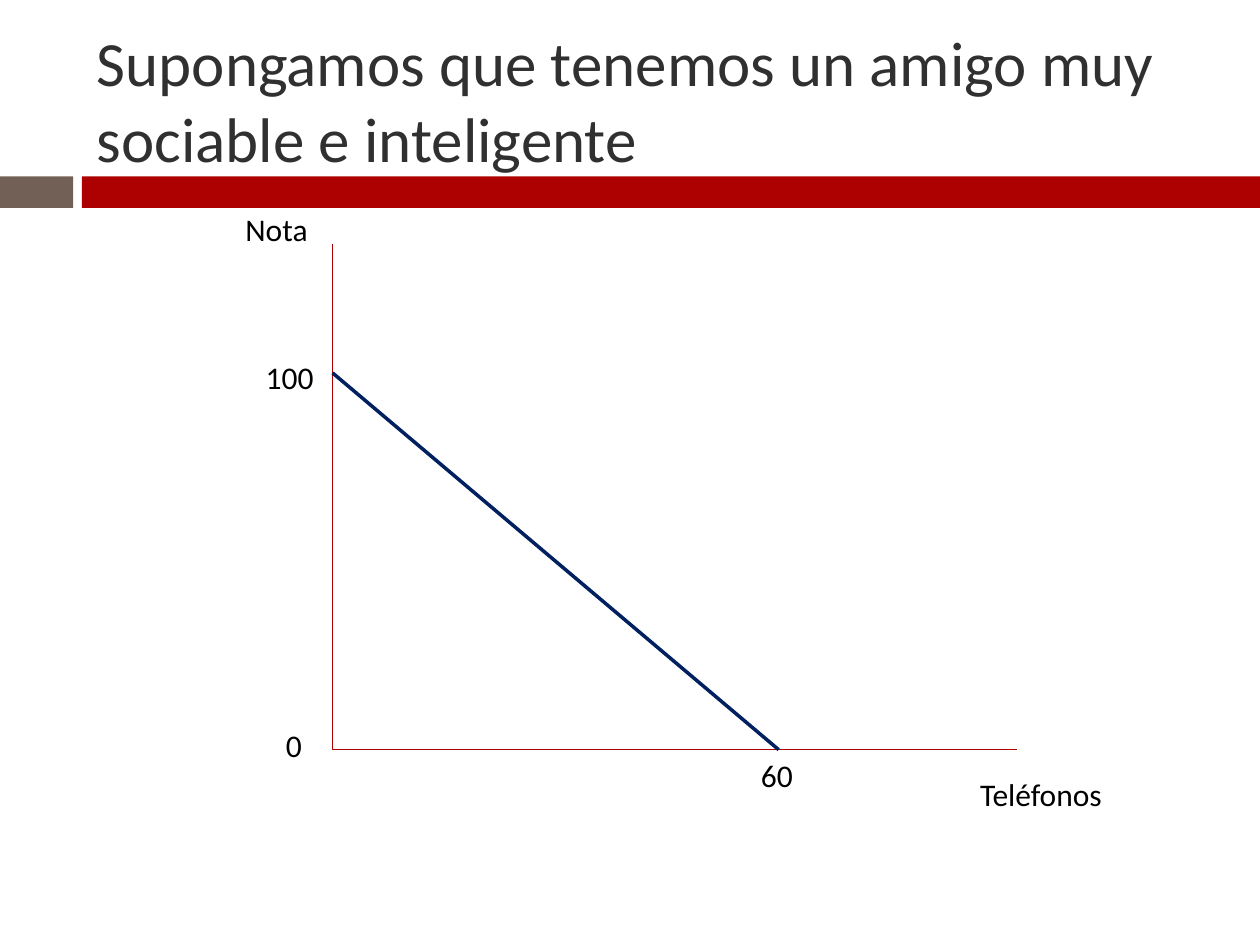
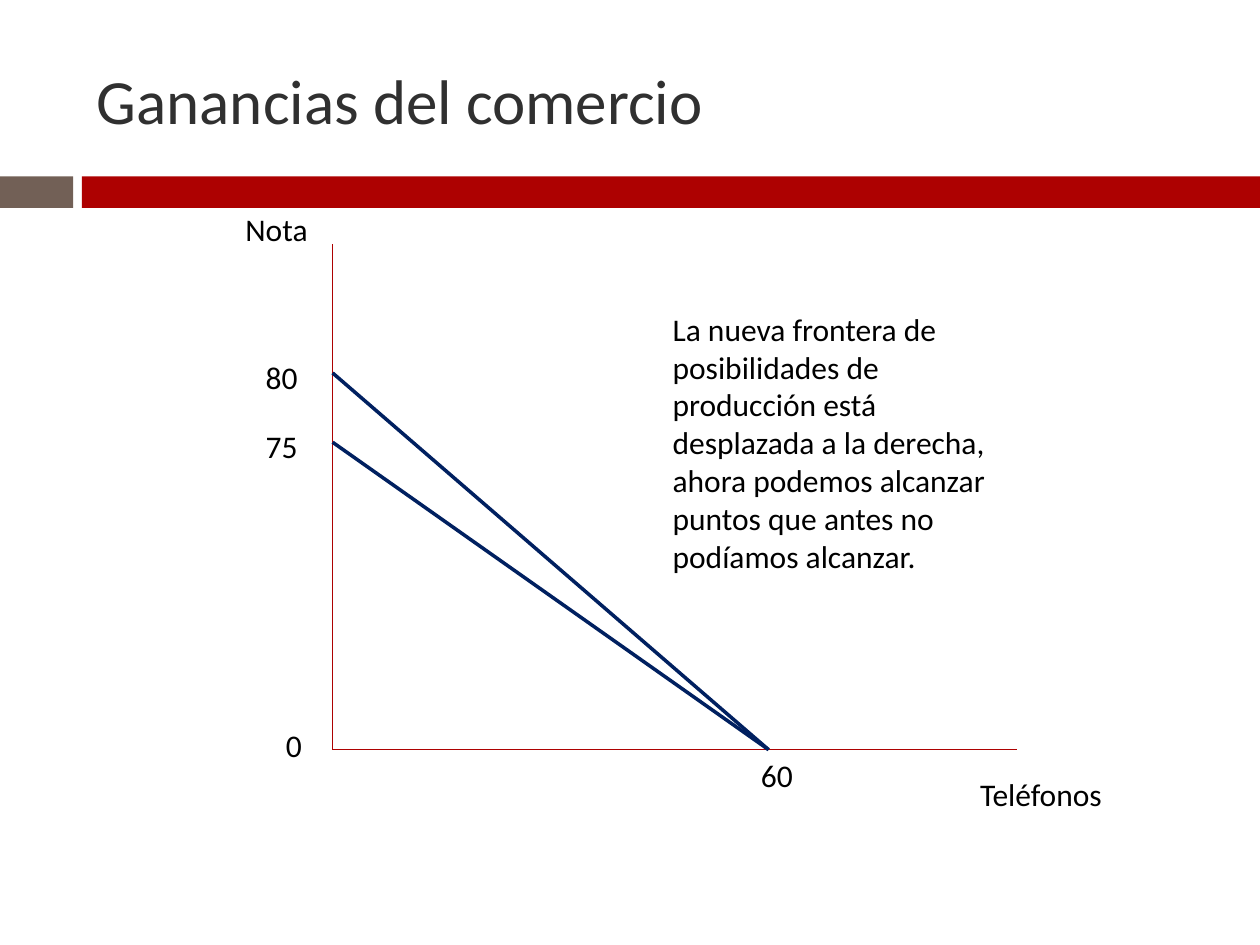
from dataclasses import dataclass

from lxml import etree
from pptx import Presentation
from pptx.dml.color import RGBColor
from pptx.enum.shapes import MSO_CONNECTOR, MSO_SHAPE
from pptx.enum.text import MSO_ANCHOR
from pptx.oxml.ns import qn
from pptx.util import Inches, Pt

RECT = MSO_SHAPE.RECTANGLE
STRAIGHT = MSO_CONNECTOR.STRAIGHT
TOP = MSO_ANCHOR.TOP
MIDDLE = MSO_ANCHOR.MIDDLE

LEFT, BASE = 2.64, 5.95
PEAK, RIGHT = 1.94, 8.07
ROW = 0.4


@dataclass(frozen=True)
class Theme:
    font: str = "Calibri"
    red: str = "AD0101"
    brown: str = "726056"
    navy: str = "002060"
    gray: str = "303030"
    black: str = "000000"
    head: float = 36
    body: float = 18
    thin: float = 0.79
    thick: float = 2


class Deck:
    def __init__(self, theme):
        self.theme = theme
        self.file = Presentation()
        self.file.slide_width = Inches(10)
        self.file.slide_height = Inches(7.5)
        self.slide = None

    def page(self, title):
        theme = self.theme
        self.slide = self.file.slides.add_slide(self.file.slide_layouts[6])
        self.band(0, 0.58, theme.brown)
        self.band(0.65, 9.35, theme.red)
        self.text(title, 0.67, 0.25, 8.92, 1.08, theme.head, theme.gray, MIDDLE)

    def band(self, left, width, color):
        shape = self.slide.shapes.add_shape(
            RECT, Inches(left), Inches(1.4), Inches(width), Inches(0.25))
        shape.shadow.inherit = False
        shape.fill.solid()
        shape.fill.fore_color.rgb = RGBColor.from_string(color)
        shape.line.fill.background()

    def text(self, words, left, top, width, height=ROW,
             size=None, color=None, anchor=TOP):
        box = self.slide.shapes.add_textbox(
            Inches(left), Inches(top), Inches(width), Inches(height))
        frame = box.text_frame
        frame.word_wrap = True
        frame.vertical_anchor = anchor
        frame.text = words
        font = frame.paragraphs[0].font
        font.name = self.theme.font
        font.size = Pt(size or self.theme.body)
        font.color.rgb = RGBColor.from_string(color or self.theme.black)

    def line(self, start, end, color, width):
        line = self.slide.shapes.add_connector(
            STRAIGHT, *(Inches(value) for value in (*start, *end)))
        line.line.color.rgb = RGBColor.from_string(color)
        line.line.width = Pt(width)
        etree.SubElement(line._element.spPr, qn("a:effectLst"))

    def axes(self):
        for end in ((LEFT, PEAK), (RIGHT, BASE)):
            self.line((LEFT, BASE), end, self.theme.red, self.theme.thin)
        self.text("Nota", 1.85, 1.62, 0.94)
        self.text("Teléfonos", 7.68, 6.1, 1.34)
        self.text("0", 2.17, 5.71, 0.47)
        self.text("60", 5.94, BASE, 0.63)

    def curve(self, grade, top, reach):
        self.line((LEFT, top), (reach, BASE), self.theme.navy, self.theme.thick)
        self.text(grade, 2.01, top - 0.17, 0.79)


def main():
    deck = Deck(Theme())

    deck.page("Supongamos que tenemos un amigo muy sociable e inteligente")
    deck.axes()
    deck.curve("100", 2.96, 6.18)

    deck.page("Ganancias del comercio")
    deck.axes()
    for grade, top in (("80", 2.96), ("75", 3.51)):
        deck.curve(grade, top, 6.1)
    deck.text(
        "La nueva frontera de posibilidades de producción está desplazada "
        "a la derecha, ahora podemos alcanzar puntos que antes no podíamos "
        "alcanzar.", 5.24, 2.41, 2.83, 2.22)

    deck.file.save("out.pptx")


if __name__ == "__main__":
    main()
